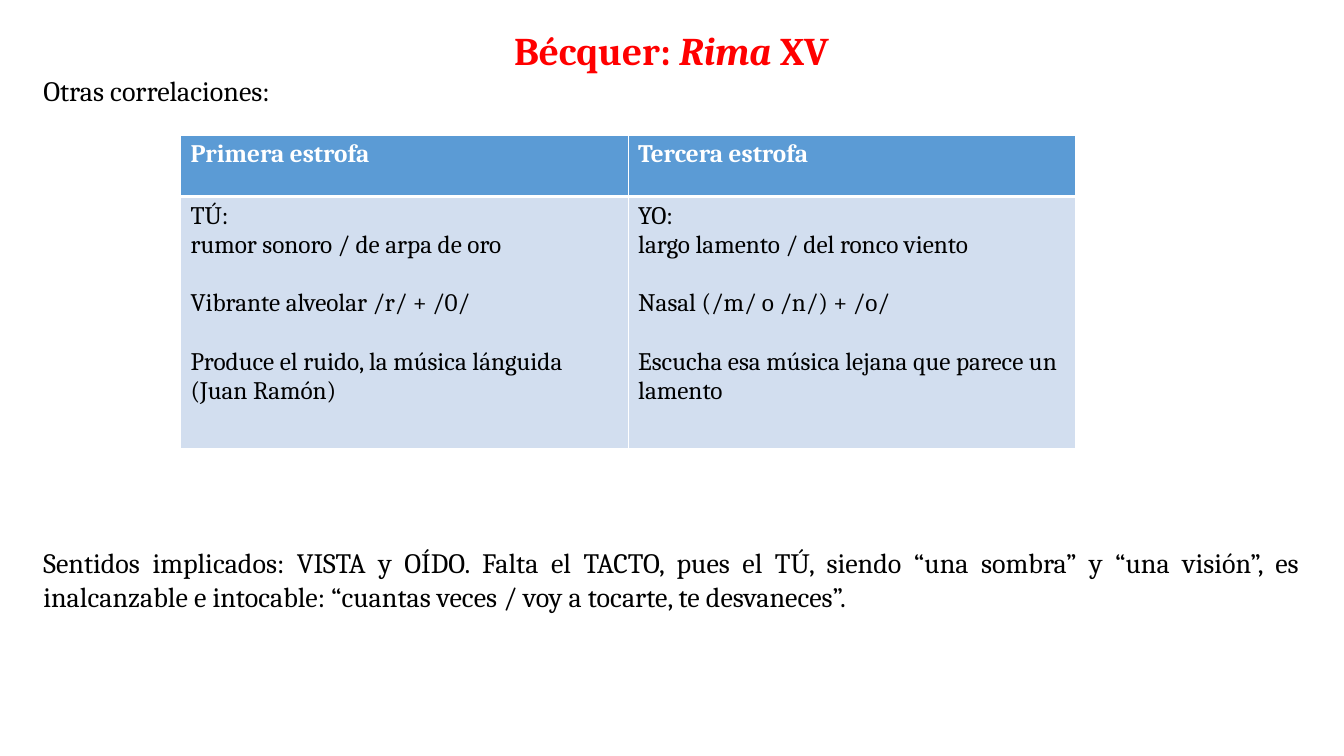
from lxml import etree
from pptx import Presentation
from pptx.dml.color import RGBColor
from pptx.enum.text import MSO_ANCHOR, MSO_AUTO_SIZE, PP_ALIGN
from pptx.oxml.ns import qn
from pptx.util import Inches, Pt

TOP = MSO_ANCHOR.TOP
NO_AUTOFIT = MSO_AUTO_SIZE.NONE
CENTER, LEFT, JUSTIFY = PP_ALIGN.CENTER, PP_ALIGN.LEFT, PP_ALIGN.JUSTIFY

RED = RGBColor(0xFF, 0x00, 0x00)
BLACK = RGBColor(0x00, 0x00, 0x00)
WHITE = RGBColor(0xFF, 0xFF, 0xFF)
HEADER_BLUE = RGBColor(0x5B, 0x9B, 0xD5)
PALE_BLUE = RGBColor(0xD2, 0xDE, 0xEF)

TITLE_FONT = {"name": "Cambria", "size": Pt(28), "bold": True}
BODY_FONT = {"name": "Cambria", "size": Pt(20), "bold": False}
HEADER_FONT = {"name": "Cambria", "size": Pt(18), "bold": True}
CELL_FONT = {"name": "Cambria", "size": Pt(18), "bold": False}

TITLE_RUNS = [("Bécquer: ", False), ("Rima", True), (" XV", False)]
# Each paragraph is a text and the space before it in points.
BODY_TEXTS = [
    ("Otras correlaciones:", 0),
    ("Sentidos implicados: VISTA y OÍDO. Falta el TACTO, pues el TÚ, siendo "
     "“una sombra” y “una visión”, es inalcanzable e intocable: "
     "“cuantas veces / voy a tocarte, te desvaneces”.", 313),
]
STANZAS = {
    "Primera estrofa": [
        ("TÚ:", 0),
        ("rumor sonoro / de arpa de oro", 0),
        ("Vibrante alveolar /r/ + /0/", 21),
        ("Produce el ruido, la música lánguida (Juan Ramón)", 21),
    ],
    "Tercera estrofa": [
        ("YO:", 0),
        ("largo lamento / del ronco viento", 0),
        ("Nasal (/m/ o /n/) + /o/", 21),
        ("Escucha esa música lejana que parece un lamento", 21),
    ],
}


def add_run(paragraph, text, font_values, color, italic=False):
    run = paragraph.add_run()
    run.text = text
    for attribute, value in font_values.items():
        setattr(run.font, attribute, value)
    run.font.italic = italic
    run.font.color.rgb = color


def fill_paragraphs(text_frame, texts, font_values, color, alignment):
    for index, (text, space_before) in enumerate(texts):
        paragraph = text_frame.paragraphs[0] if index == 0 else text_frame.add_paragraph()
        paragraph.alignment = alignment
        paragraph.space_before = Pt(space_before)
        add_run(paragraph, text, font_values, color)


def place_placeholder(placeholder, left, top, width, height):
    box = {"left": left, "top": top, "width": width, "height": height}
    for attribute, value in box.items():
        setattr(placeholder, attribute, Inches(value))
    text_frame = placeholder.text_frame
    frame_values = {"vertical_anchor": TOP, "auto_size": NO_AUTOFIT, "word_wrap": True}
    for attribute, value in frame_values.items():
        setattr(text_frame, attribute, value)
    return text_frame


def remove_bullet(paragraph):
    properties = paragraph._p.get_or_add_pPr()
    properties.set("marL", "0")
    properties.set("indent", "0")
    etree.SubElement(properties, qn("a:buNone"))


def build_title(placeholder, left, top, width, height):
    paragraph = place_placeholder(placeholder, left, top, width, height).paragraphs[0]
    paragraph.alignment = CENTER
    for text, italic in TITLE_RUNS:
        add_run(paragraph, text, TITLE_FONT, RED, italic)


def build_body(placeholder, left, top, width, height):
    text_frame = place_placeholder(placeholder, left, top, width, height)
    fill_paragraphs(text_frame, BODY_TEXTS, BODY_FONT, BLACK, JUSTIFY)
    for paragraph in text_frame.paragraphs:
        remove_bullet(paragraph)


def set_borders(cell, widths):
    """Draw white borders; widths maps a side (L, R, T, B) to points."""
    properties = cell._tc.get_or_add_tcPr()
    for side, width in widths.items():
        line = etree.SubElement(properties, qn(f"a:ln{side}"), w=str(Pt(width)))
        solid = etree.SubElement(line, qn("a:solidFill"))
        etree.SubElement(solid, qn("a:srgbClr"), val=str(WHITE))


def build_cell(cell, texts, font_values, color, fill, borders):
    fill_paragraphs(cell.text_frame, texts, font_values, color, LEFT)
    set_borders(cell, borders)
    cell.fill.solid()
    cell.fill.fore_color.rgb = fill


def build_stanza_table(slide, left, top, width, height, header_height=0.61):
    frame = slide.shapes.add_table(2, len(STANZAS), Inches(left), Inches(top),
                                   Inches(width), Inches(height))
    table = frame.table
    table.rows[0].height = Inches(header_height)
    table.rows[1].height = Inches(height - header_height)
    for column, (heading, texts) in enumerate(STANZAS.items()):
        build_cell(table.cell(0, column), [(heading, 0)], HEADER_FONT, WHITE,
                   HEADER_BLUE, {"L": 1, "R": 1, "T": 1, "B": 3})
        build_cell(table.cell(1, column), texts, CELL_FONT, BLACK,
                   PALE_BLUE, {"L": 1, "R": 1, "T": 3, "B": 1})


def main():
    presentation = Presentation()
    presentation.slide_width = Inches(13.33)
    presentation.slide_height = Inches(7.5)
    slide = presentation.slides.add_slide(presentation.slide_layouts[1])
    build_title(slide.shapes.title, 0.33, 0.21, 12.66, 0.56)
    build_body(slide.placeholders[1], 0.33, 0.68, 12.66, 6.16)
    build_stanza_table(slide, 1.79, 1.34, 8.88, 3.11)
    presentation.save("out.pptx")


if __name__ == "__main__":
    main()
